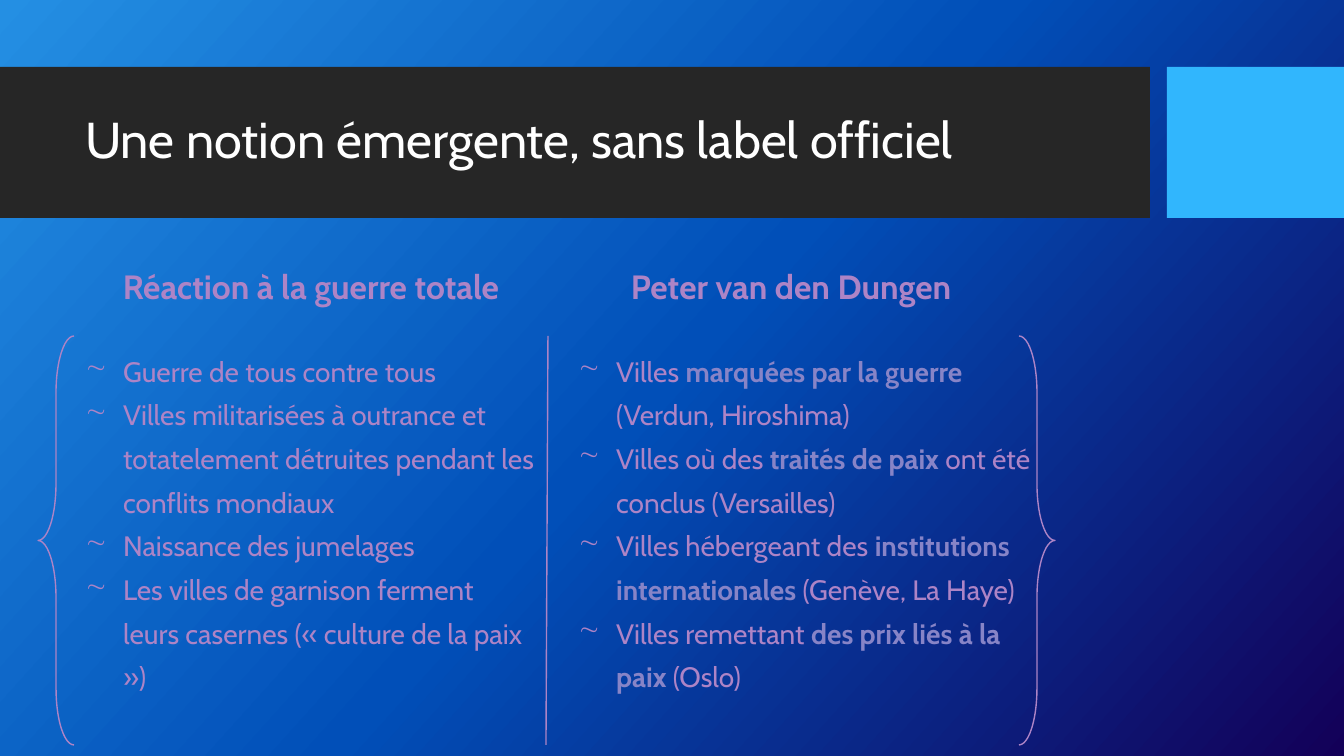
from lxml import etree
from pptx import Presentation
from pptx import util as u
from pptx.dml import color
from pptx.enum import shapes, text
from pptx.oxml import ns

FONT = "Cabin"
MAUVE, VIOLET, WHITE = "AD84C6", "8784C7", "FFFFFF"
BACKDROP = {0: "248FE3", 50: "014FB8", 100: "130058"}
COMPARISON_LAYOUT = 4

WAR_LIST = [
    "Guerre de tous contre tous",
    "Villes militarisées à outrance et totatelement détruites pendant les conflits mondiaux",
    "Naissance des jumelages",
    "Les villes de garnison ferment leurs casernes (« culture de la paix »)",
]
PEACE_LIST = [
    "Villes *marquées par la guerre *(Verdun, Hiroshima)",
    "Villes où des *traités de paix *ont été conclus (Versailles)",
    "Villes hébergeant des *institutions internationales *(Genève, La Haye)",
    "Villes remettant *des prix liés à la paix *(Oslo)",
]


def px(count):
    return u.Emu(round(count * 914400 / 100.8))


def rgb(value):
    return color.RGBColor.from_string(value)


def assign(target, values):
    for name, value in values.items():
        setattr(target, name, value)


class Slide:
    def __init__(self, deck):
        self.page = deck.slides.add_slide(deck.slide_layouts[COMPARISON_LAYOUT])

    def backdrop(self, stops, angle):
        fill = self.page.background.fill
        fill.gradient()
        fill.gradient_angle = 360 - angle
        stop_list = self.page.element.find(".//" + ns.qn("a:gsLst"))
        for stop in list(stop_list):
            stop_list.remove(stop)
        for percent, value in stops.items():
            stop = etree.SubElement(stop_list, ns.qn("a:gs"), pos=str(percent * 1000))
            etree.SubElement(stop, ns.qn("a:srgbClr"), val=value)

    def band(self, left, top, width, height, fill):
        """Draw a plain rectangle behind the placeholders."""
        box = self.page.shapes.add_shape(
            shapes.MSO_SHAPE.RECTANGLE, px(left), px(top), px(width), px(height))
        box.shadow.inherit = False
        box.fill.solid()
        box.fill.fore_color.rgb = rgb(fill)
        box.line.fill.background()
        box.element.getparent().insert(2, box.element)

    def fill_placeholder(self, index, place, paragraphs, size, hue,
                         align=text.PP_ALIGN.LEFT, anchor=text.MSO_ANCHOR.TOP,
                         spacing=1.0, bold=False, bullet=None):
        """Move and fill a placeholder; parts between asterisks are bold and violet."""
        box = self.page.placeholders[index]
        assign(box, dict(zip(("left", "top", "width", "height"), map(px, place))))
        frame = box.text_frame
        assign(frame, {"word_wrap": True, "auto_size": text.MSO_AUTO_SIZE.NONE,
                       "vertical_anchor": anchor})
        for number, wording in enumerate(paragraphs):
            para = frame.add_paragraph() if number else frame.paragraphs[0]
            if bullet:
                self.bullet(para, bullet)
            assign(para, {"alignment": align, "line_spacing": spacing,
                          "space_before": u.Pt(0), "space_after": u.Pt(0)})
            for part, words in enumerate(wording.split("*")):
                strong = part % 2 == 1
                span = para.add_run()
                span.text = words
                assign(span.font, {"name": FONT, "size": u.Pt(size), "bold": bold or strong})
                span.font.color.rgb = rgb(VIOLET if strong else hue)

    def bullet(self, para, sign):
        properties = para._p.get_or_add_pPr()
        indent = px(38)
        properties.set("marL", str(indent))
        properties.set("indent", str(-indent))
        etree.SubElement(properties, ns.qn("a:buFontTx"))
        etree.SubElement(properties, ns.qn("a:buChar"), char=sign)

    def stroke(self, item):
        item.line.color.rgb = rgb(MAUVE)
        item.line.width = u.Pt(1)

    def divider(self, start, end):
        line = self.page.shapes.add_connector(
            shapes.MSO_CONNECTOR.STRAIGHT, *map(px, start + end))
        self.stroke(line)
        etree.SubElement(line.element.spPr, ns.qn("a:effectLst"))

    def brace(self, kind, left):
        brace = self.page.shapes.add_shape(kind, px(left), px(336), px(36), px(409))
        brace.shadow.inherit = False
        brace.fill.background()
        brace.adjustments[0] = 1.58
        self.stroke(brace)


def main():
    deck = Presentation()
    assign(deck, {"slide_width": px(1344), "slide_height": px(756)})
    slide = Slide(deck)
    slide.backdrop(BACKDROP, 42)
    slide.band(0, 67, 1150, 151, "262626")
    slide.band(1167, 67, 177, 151, "31B6FD")

    slide.fill_placeholder(
        0, (75, 83, 1059, 119), ["Une notion émergente, sans label officiel"],
        36, WHITE, anchor=text.MSO_ANCHOR.MIDDLE, spacing=0.9)
    headings = {1: (88, "Réaction à la guerre totale"), 3: (568, "Peter van den Dungen")}
    for index, (left, heading) in headings.items():
        slide.fill_placeholder(index, (left, 261, 446, 50), [heading], 24, MAUVE,
                               align=text.PP_ALIGN.CENTER, bold=True)
    lists = {2: ((75, 339, 471, 363), WAR_LIST), 4: ((568, 339, 478, 407), PEACE_LIST)}
    for index, (place, items) in lists.items():
        slide.fill_placeholder(index, place, items, 20, MAUVE, spacing=1.3, bullet="~")

    slide.divider((546, 745), (548, 336))
    slide.brace(shapes.MSO_SHAPE.LEFT_BRACE, 38)
    slide.brace(shapes.MSO_SHAPE.RIGHT_BRACE, 1019)
    deck.save("out.pptx")


if __name__ == "__main__":
    main()
